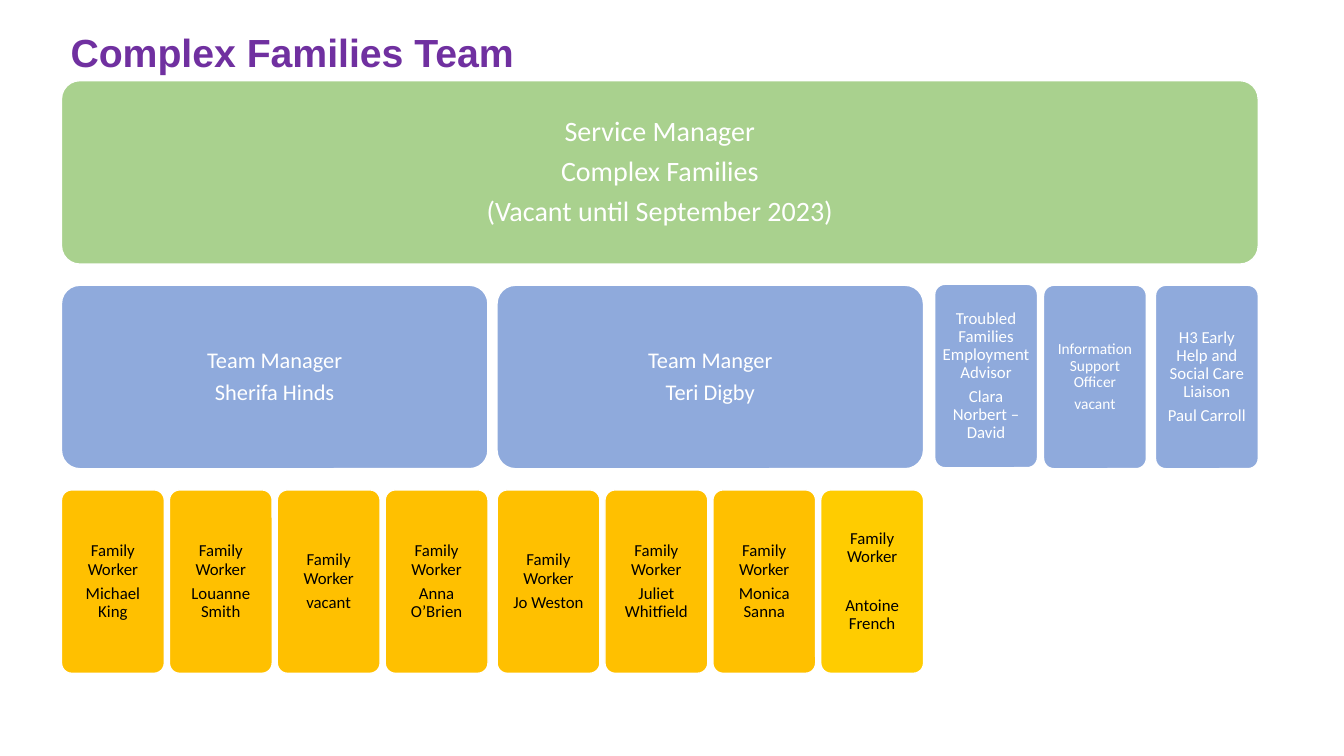
from dataclasses import dataclass

from pptx import Presentation
from pptx.dml.color import RGBColor
from pptx.enum.shapes import MSO_SHAPE
from pptx.enum.text import MSO_ANCHOR, MSO_AUTO_SIZE, PP_ALIGN
from pptx.slide import Slide
from pptx.text.text import TextFrame
from pptx.util import Emu, Pt


@dataclass(frozen=True)
class Theme:
    white: str = "FFFFFF"
    black: str = "000000"
    purple: str = "7030A0"
    green: str = "A9D18E"
    blue: str = "8FAADC"
    amber: str = "FFC000"
    yellow: str = "FFCC00"
    title_font: str = "Arial"
    body_font: str = "Calibri"
    title_size: int = 28
    service_size: int = 20
    manager_size: int = 16
    role_size: int = 12
    small_size: int = 11


@dataclass(frozen=True)
class Role:
    lines: tuple[str, ...]
    left: int
    top: int
    width: int
    fill: str
    color: str
    size: int
    margin: int
    gap: float = 0.35


THEME = Theme()
EMU_PER_PX = 9144
LEFT_EDGE = 61
CARD_HEIGHT = 182
SERVICE_TOP, MANAGER_TOP, WORKER_TOP = 80, 283, 486
SERVICE_WIDTH, MANAGER_WIDTH, NARROW_WIDTH = 1187, 423, 102
TEAM_PITCH = 432
WORKER_PITCH = 107
WIDE_GAP = 1.79

TEAMS = (
    (("Team Manager", "Sherifa Hinds"),
     ("Michael King", "Louanne Smith", "vacant", "Anna O’Brien")),
    (("Team Manger", "Teri Digby"),
     ("Jo Weston", "Juliet Whitfield", "Monica Sanna", "Antoine French")),
)
SPECIALISTS = (
    (("Troubled Families Employment Advisor", "Clara Norbert –David"),
     927, 282, THEME.role_size),
    (("Information Support Officer", "vacant"),
     1035, MANAGER_TOP, THEME.small_size),
    (("H3 Early Help and Social Care Liaison", "Paul Carroll"),
     1146, MANAGER_TOP, THEME.role_size),
)


def px(length: int) -> Emu:
    return Emu(length * EMU_PER_PX)


def write_text(frame: TextFrame, lines: tuple[str, ...], *, font: str, size: int,
               color: str, bold: bool = False, align: PP_ALIGN = PP_ALIGN.CENTER,
               anchor: MSO_ANCHOR = MSO_ANCHOR.MIDDLE, margin: int = 10,
               vertical_margin: int = 5, gap: float = 0) -> None:
    frame.auto_size = MSO_AUTO_SIZE.NONE
    frame.word_wrap = True
    frame.vertical_anchor = anchor
    frame.margin_left = frame.margin_right = px(margin)
    frame.margin_top = frame.margin_bottom = px(vertical_margin)
    for index, line in enumerate(lines):
        paragraph = frame.paragraphs[0] if index == 0 else frame.add_paragraph()
        paragraph.alignment = align
        paragraph.line_spacing = 0.9
        paragraph.space_before = Pt(0)
        paragraph.space_after = Pt(size * gap)
        run = paragraph.add_run()
        run.text = line
        run.font.name = font
        run.font.size = Pt(size)
        run.font.bold = bold
        run.font.color.rgb = RGBColor.from_string(color)


def draw_title(slide: Slide, text: str) -> None:
    title = slide.shapes.title
    title.left, title.top, title.width, title.height = map(px, (60, 20, 1189, 60))
    write_text(title.text_frame, (text,), font=THEME.title_font,
               size=THEME.title_size, color=THEME.purple, bold=True,
               align=PP_ALIGN.LEFT, anchor=MSO_ANCHOR.BOTTOM)


def draw_role(slide: Slide, role: Role) -> None:
    card = slide.shapes.add_shape(
        MSO_SHAPE.ROUNDED_RECTANGLE, px(role.left), px(role.top),
        px(role.width), px(CARD_HEIGHT))
    card.adjustments[0] = 0.1
    card.shadow.inherit = False
    card.fill.solid()
    card.fill.fore_color.rgb = RGBColor.from_string(role.fill)
    card.line.color.rgb = RGBColor.from_string(THEME.white)
    card.line.width = Pt(1)
    write_text(card.text_frame, role.lines, font=THEME.body_font, size=role.size,
               color=role.color, margin=role.margin,
               vertical_margin=role.margin, gap=role.gap)


def team_roles() -> list[Role]:
    roles = []
    for team_index, (manager, workers) in enumerate(TEAMS):
        team_left = LEFT_EDGE + team_index * TEAM_PITCH
        roles.append(Role(manager, team_left, MANAGER_TOP, MANAGER_WIDTH,
                          THEME.blue, THEME.white, THEME.manager_size, 7))
        for worker_index, worker in enumerate(workers):
            set_apart = worker == "Antoine French"
            roles.append(Role(
                ("Family Worker", worker), team_left + worker_index * WORKER_PITCH,
                WORKER_TOP, NARROW_WIDTH,
                THEME.yellow if set_apart else THEME.amber, THEME.black,
                THEME.role_size, 5, WIDE_GAP if set_apart else 0.35))
    return roles


def main() -> None:
    presentation = Presentation()
    presentation.slide_width, presentation.slide_height = px(1333), px(750)
    slide = presentation.slides.add_slide(presentation.slide_layouts[5])
    draw_title(slide, "Complex Families Team")
    service_manager = Role(
        ("Service Manager", "Complex Families", "(Vacant until September 2023)"),
        LEFT_EDGE, SERVICE_TOP, SERVICE_WIDTH, THEME.green, THEME.white,
        THEME.service_size, 8)
    specialists = [
        Role(lines, left, top, NARROW_WIDTH, THEME.blue, THEME.white, size, 5)
        for lines, left, top, size in SPECIALISTS]
    for role in (service_manager, *team_roles(), *specialists):
        draw_role(slide, role)
    presentation.save("out.pptx")


if __name__ == "__main__":
    main()
